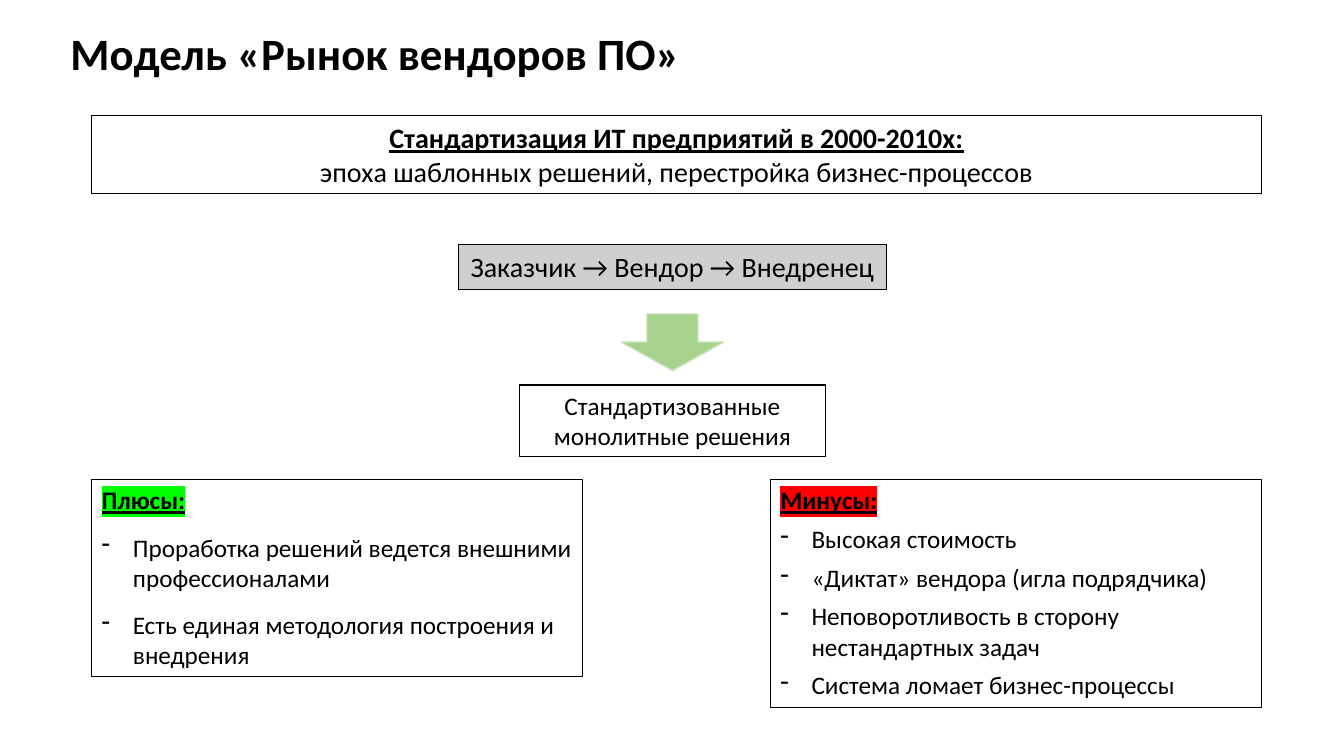
from lxml import etree
from pptx import Presentation, util as u
from pptx.dml.color import RGBColor
from pptx.enum import shapes, text
from pptx.oxml.ns import qn

BLACK = RGBColor(0x00, 0x00, 0x00)
GREY = RGBColor(0xD0, 0xCE, 0xCE)
GREEN = RGBColor(0xA9, 0xD1, 0x8E)
PALE_GREEN = RGBColor(0xC5, 0xE0, 0xB4)
PLUS_MARK = RGBColor(0x00, 0xFF, 0x00)
MINUS_MARK = RGBColor(0xFF, 0x00, 0x00)

deck = Presentation()
deck.slide_width, deck.slide_height = u.Inches(13.33), u.Inches(7.5)
slide = deck.slides.add_slide(deck.slide_layouts[6])
COL, ROW = deck.slide_width / 100, deck.slide_height / 100
MARGIN, CONTENT, LIST_WIDTH = 6.83, 87.02, 36.53
LIST_TOP = 63.47


def write(frame, words, size=18, bold=False, underline=False, mark=None,
          align=text.PP_ALIGN.LEFT, before=0, dash=False):
    first = frame.paragraphs[0]
    line = first if not first.runs else frame.add_paragraph()
    line.alignment = align
    line.space_before = u.Pt(before)
    run = line.add_run()
    run.text = words
    run.font.size, run.font.bold, run.font.underline = u.Pt(size), bold, underline
    run.font.color.rgb = BLACK
    run.font.name = "Calibri"
    if mark is not None:
        highlight = etree.Element(qn("a:highlight"))
        etree.SubElement(highlight, qn("a:srgbClr"), val=str(mark))
        run.font._element.find(qn("a:latin")).addprevious(highlight)
    if dash:
        props = line._p.get_or_add_pPr()
        indent = u.Inches(0.31)
        props.set("marL", str(indent))
        props.set("indent", str(-indent))
        etree.SubElement(props, qn("a:buFontTx"))
        etree.SubElement(props, qn("a:buChar"), char="-")
    return line


def block(left, top, width, height, kind=shapes.MSO_SHAPE.RECTANGLE,
          fill=None, outline=BLACK, weight=0.75):
    shape = slide.shapes.add_shape(kind, round(left * COL), round(top * ROW),
                                   round(width * COL), round(height * ROW))
    shape.shadow.inherit = False
    if fill is None:
        shape.fill.background()
    else:
        shape.fill.solid()
        shape.fill.fore_color.rgb = fill
    shape.line.color.rgb = outline
    shape.line.width = u.Pt(weight)
    shape.text_frame.word_wrap = True
    shape.text_frame.vertical_anchor = text.MSO_ANCHOR.TOP
    return shape.text_frame


title = slide.shapes.add_textbox(round(4.5 * COL), round(2.53 * ROW),
                                 round(86.27 * COL), round(9.73 * ROW)).text_frame
title.word_wrap = True
title.vertical_anchor = text.MSO_ANCHOR.MIDDLE
write(title, "Модель «Рынок вендоров ПО»", size=32, bold=True).line_spacing = 0.9

CENTER = text.PP_ALIGN.CENTER
era = block(MARGIN, 15.33, CONTENT, 10.27)
write(era, "Стандартизация ИТ предприятий в 2000-2010х:", size=20, bold=True,
      underline=True, align=CENTER)
write(era, "эпоха шаблонных решений, перестройка бизнес-процессов", size=20, align=CENTER)

for words, top, width, height, size, fill, before in [
    ("Заказчик → Вендор → Внедренец", 32.4, 31.81, 5.87, 20, GREY, 12),
    ("Стандартизованные монолитные решения", 50.93, 22.73, 9.47, 18, None, 0),
]:
    step = block(50 + 0.03 - width / 2, top, width, height, fill=fill)
    write(step, words, size=size, align=CENTER, before=before)

block(46.25, 41.53, 7.58, 7.47, kind=shapes.MSO_SHAPE.DOWN_ARROW,
      fill=GREEN, outline=PALE_GREEN, weight=1)

for heading, mark, left, height, before, points in [
    ("Плюсы:", PLUS_MARK, MARGIN, 26, 12, [
        "Проработка решений ведется внешними профессионалами",
        "Есть единая методология построения и внедрения",
    ]),
    ("Минусы:", MINUS_MARK, MARGIN + CONTENT - LIST_WIDTH, 30.13, 6, [
        "Высокая стоимость",
        "«Диктат» вендора (игла подрядчика)",
        "Неповоротливость в сторону нестандартных задач",
        "Система ломает бизнес-процессы",
    ]),
]:
    verdict = block(left, LIST_TOP, LIST_WIDTH, height)
    write(verdict, heading, bold=True, underline=True, mark=mark, before=before)
    for point in points:
        write(verdict, point, before=before, dash=True)

deck.save("out.pptx")
